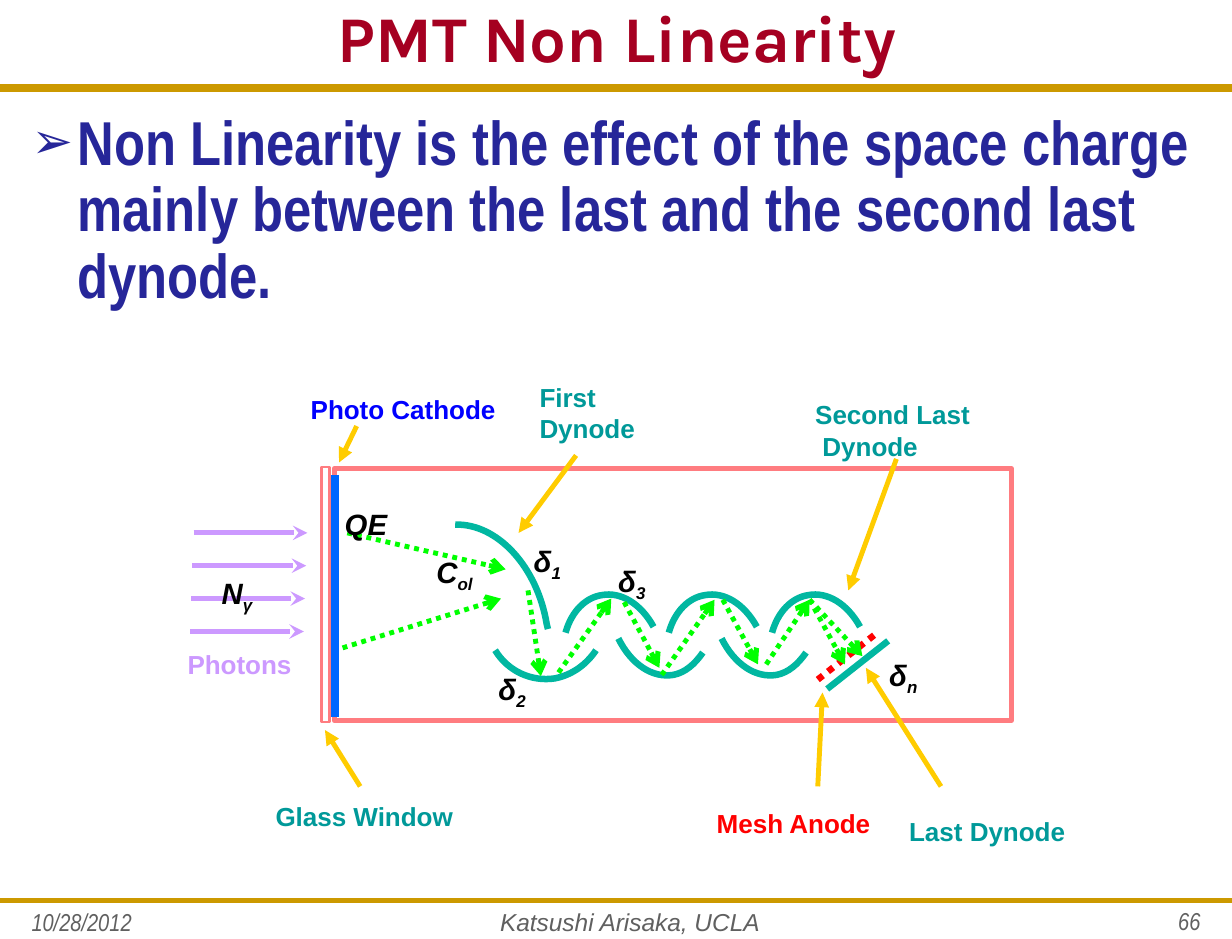
from dataclasses import dataclass

from lxml import etree
from pptx import Presentation
from pptx.dml.color import RGBColor
from pptx.enum.dml import MSO_LINE
from pptx.enum.shapes import MSO_CONNECTOR, MSO_SHAPE
from pptx.enum.text import MSO_ANCHOR, MSO_AUTO_SIZE, PP_ALIGN
from pptx.oxml.ns import qn
from pptx.util import Inches, Pt

STRAIGHT = MSO_CONNECTOR.STRAIGHT
RECTANGLE = MSO_SHAPE.RECTANGLE
DOTTED = MSO_LINE.ROUND_DOT
MIDDLE = MSO_ANCHOR.MIDDLE
FIXED, GROW = MSO_AUTO_SIZE.NONE, MSO_AUTO_SIZE.SHAPE_TO_FIT_TEXT
LEFT, CENTER, RIGHT = PP_ALIGN.LEFT, PP_ALIGN.CENTER, PP_ALIGN.RIGHT


@dataclass(frozen=True)
class Theme:
    title: str = "A50021"
    body: str = "262699"
    rule: str = "CC9900"
    footer: str = "606060"
    teal: str = "009999"
    dynode: str = "01B7A1"
    anode: str = "FF0000"
    cathode: str = "0066FF"
    cathode_text: str = "0000FF"
    tube: str = "FF7C80"
    pointer: str = "FFCC00"
    electron: str = "00FF00"
    photon: str = "CC99FF"
    symbol: str = "000000"
    white: str = "FFFFFF"
    sans: str = "Arial"
    narrow: str = "Arial Narrow"
    display: str = "Karla"
    title_size: int = 40
    body_size: int = 38
    symbol_size: int = 18
    label_size: int = 16
    footer_size: int = 15


class SlideBuilder:
    def __init__(self, page, theme):
        self.page, self.theme = page, theme

    def style(self, para, name, size, color, bold=False, italic=False):
        font = para.font
        font.name, font.size = name, Pt(size)
        font.bold, font.italic = bold, italic
        font.color.rgb = RGBColor.from_string(color)

    def place(self, shape, left, top, width, height):
        shape.left, shape.top = Inches(left), Inches(top)
        shape.width, shape.height = Inches(width), Inches(height)

    def title(self, text, *area):
        box = self.page.shapes.title
        self.place(box, *area)
        frame = box.text_frame
        frame.text, frame.auto_size, frame.vertical_anchor = text, FIXED, MIDDLE
        para = frame.paragraphs[0]
        para.alignment, para.line_spacing = CENTER, 0.8
        self.style(para, self.theme.display, self.theme.title_size, self.theme.title, bold=True)

    def bullet(self, text, *area):
        box = self.page.placeholders[1]
        self.place(box, *area)
        frame = box.text_frame
        frame.text, frame.auto_size = text, FIXED
        para = frame.paragraphs[0]
        para.line_spacing, para.space_before = 0.9, Pt(0)
        props = para._p.get_or_add_pPr()
        props.set("marL", str(Inches(0.39)))
        props.set("indent", str(-Inches(0.39)))
        etree.SubElement(props, qn("a:buSzPct")).set("val", "80000")
        etree.SubElement(props, qn("a:buChar")).set("char", "➢")
        self.style(para, self.theme.narrow, self.theme.body_size, self.theme.body, bold=True)

    def text_box(self, left, top, width, height, wrap, fit):
        box = self.page.shapes.add_textbox(Inches(left), Inches(top), Inches(width), Inches(height))
        box.text_frame.word_wrap, box.text_frame.auto_size = wrap, fit
        return box.text_frame

    def footer(self, text, area, align, name):
        frame = self.text_box(*area, True, FIXED)
        frame.text = text
        para = frame.paragraphs[0]
        para.alignment = align
        self.style(para, name, self.theme.footer_size, self.theme.footer, italic=True)

    def label(self, text, area, color, wrap=False):
        frame = self.text_box(*area, wrap, GROW)
        frame.text = text
        for para in frame.paragraphs:
            self.style(para, self.theme.sans, self.theme.label_size, color, bold=True)

    def symbol(self, base, subscript, left, top, width):
        para = self.text_box(left, top, width, 0.4, False, GROW).paragraphs[0]
        self.style(para, self.theme.sans, self.theme.symbol_size, self.theme.symbol, bold=True, italic=True)
        para.add_run().text = base
        if subscript:
            span = para.add_run()
            span.text = subscript
            span.font._element.set("baseline", "-25000")

    def line(self, start, end, color, width, dash=None, head=None):
        x1, y1, x2, y2 = (Inches(value) for value in (*start, *end))
        connector = self.page.shapes.add_connector(STRAIGHT, x1, y1, x2, y2)
        self.stroke(connector, color, width)
        if dash is not None:
            connector.line.dash_style = dash
        props = connector._element.spPr
        if head:
            etree.SubElement(props.find(qn("a:ln")), qn("a:tailEnd")).set("type", head)
        etree.SubElement(props, qn("a:effectLst"))

    def stroke(self, shape, color, width):
        shape.line.color.rgb = RGBColor.from_string(color)
        shape.line.width = Pt(width)

    def rectangle(self, area, color, width, fill=None):
        box = self.page.shapes.add_shape(RECTANGLE, *(Inches(value) for value in area))
        box.shadow.inherit = False
        self.stroke(box, color, width)
        if fill:
            box.fill.solid()
            box.fill.fore_color.rgb = RGBColor.from_string(fill)
        else:
            box.fill.background()

    def curve(self, points, shift=0):
        """Draw Bezier arcs: a start point, then three points for each arc."""
        start, *rest = [(Inches(x + shift), Inches(y)) for x, y in points]
        builder = self.page.shapes.build_freeform(*start)
        builder.add_line_segments(rest, close=False)
        shape = builder.convert_to_shape()
        segments = list(shape._element.iter(qn("a:lnTo")))
        for first in range(0, len(segments), 3):
            outline = segments[first].getparent()
            bezier = etree.SubElement(outline, qn("a:cubicBezTo"))
            for segment in segments[first:first + 3]:
                bezier.append(segment[0])
                outline.remove(segment)
        shape.shadow.inherit = False
        shape.fill.background()
        self.stroke(shape, self.theme.dynode, 4)


def main():
    deck = Presentation()
    deck.slide_width, deck.slide_height = Inches(10.5), Inches(8)
    theme = Theme()
    slide = SlideBuilder(deck.slides.add_slide(deck.slide_layouts[1]), theme)

    # Rules, footer, title and statement
    for y, width in ((0.75, 4.5), (7.67, 3)):
        slide.line((0, y), (10.5, y), theme.rule, width)
    slide.footer("10/28/2012", (0.17, 7.68, 2.08, 0.32), LEFT, theme.narrow)
    slide.footer("Katsushi Arisaka, UCLA", (2.33, 7.68, 6.08, 0.32), CENTER, theme.sans)
    slide.footer("66", (8.5, 7.67, 1.83, 0.33), RIGHT, theme.narrow)
    slide.title("PMT Non Linearity", 0.17, 0, 10.17, 0.75)
    slide.bullet("Non Linearity is the effect of the space charge mainly between "
                 "the last and the second last dynode.", 0.17, 0.9, 10.22, 6.67)

    # Tube, photo cathode and glass window
    slide.rectangle((2.85, 3.99, 5.77, 2.15), theme.tube, 3)
    slide.line((2.85, 6.11), (2.85, 4.05), theme.cathode, 6)
    slide.rectangle((2.74, 3.98, 0.07, 2.17), theme.tube, 1.5, theme.white)

    # Dynodes: the first two, then upper and lower rows at an equal pitch
    pitch = 0.88
    slide.curve([(4.67, 5.36), (4.67, 5.35), (4.66, 5.33), (4.66, 5.32),
                 (4.58, 4.83), (4.24, 4.46), (3.88, 4.47)])
    slide.curve([(4.22, 5.54), (4.33, 5.72), (4.53, 5.81), (4.73, 5.78),
                 (4.88, 5.75), (5, 5.66), (5.08, 5.54)])
    upper = [(5.57, 5.34), (5.46, 5.14), (5.29, 5.04), (5.13, 5.07),
             (4.99, 5.09), (4.87, 5.21), (4.82, 5.39)]
    lower = [(5.27, 5.44), (5.38, 5.66), (5.56, 5.78), (5.74, 5.75),
             (5.84, 5.73), (5.92, 5.66), (5.99, 5.56)]
    for row, count in ((upper, 3), (lower, 2)):
        for index in range(count):
            slide.curve(row, index * pitch)

    # Last dynode and mesh anode
    slide.line((7.05, 5.87), (7.57, 5.46), theme.dynode, 4)
    slide.line((6.97, 5.79), (7.49, 5.38), theme.anode, 4, DOTTED)

    # Electron paths
    for start, end in (
        ((2.96, 4.54), (4.31, 4.85)), ((2.92, 5.52), (4.27, 5.1)),
        ((4.5, 5.03), (4.61, 5.76)), ((4.76, 5.73), (5.21, 5.1)),
        ((5.32, 5.13), (5.62, 5.69)), ((5.64, 5.75), (6.09, 5.11)),
        ((6.16, 5.11), (6.46, 5.66)), ((6.53, 5.66), (6.9, 5.11)),
        ((6.9, 5.11), (7.2, 5.66)), ((6.9, 5.11), (7.35, 5.59)),
    ):
        slide.line(start, end, theme.electron, 3, DOTTED, "arrow")

    # Incoming photons
    for index in range(4):
        x, y = 1.65 - 0.01 * index, 4.54 + 0.28 * index
        slide.line((x, y), (x + 0.97, y), theme.photon, 3, head="stealth")

    # Part names and their pointers
    slide.label("Photo Cathode", (2.55, 3.3, 1.8, 0.37), theme.cathode_text)
    slide.label("First Dynode", (4.5, 3.2, 1.5, 0.64), theme.teal, wrap=True)
    slide.label("Second Last\n Dynode", (6.85, 3.35, 1.54, 0.64), theme.teal)
    slide.label("Glass Window", (2.25, 6.77, 2.13, 0.37), theme.teal, wrap=True)
    slide.label("Mesh Anode", (6.01, 6.83, 1.52, 0.37), theme.anode)
    slide.label("Last Dynode", (7.65, 6.9, 1.55, 0.37), theme.teal)
    slide.label("Photons", (1.5, 5.48, 1.24, 0.37), theme.photon, wrap=True)
    for start, end in (
        ((3.04, 3.63), (2.89, 3.94)), ((4.91, 3.88), (4.42, 4.54)),
        ((7.64, 3.91), (7.23, 5.03)), ((3.07, 6.7), (2.77, 6.22)),
        ((6.97, 6.7), (7.01, 5.9)), ((8.02, 6.7), (7.38, 5.69)),
    ):
        slide.line(start, end, theme.pointer, 3, head="triangle")

    # Symbols
    for base, subscript, left, top, width in (
        ("QE", "", 2.84, 4.26, 0.63), ("C", "ol", 3.62, 4.67, 0.58),
        ("δ", "1", 4.45, 4.58, 0.48), ("δ", "2", 4.15, 5.67, 0.48),
        ("δ", "3", 5.17, 4.75, 0.48), ("δ", "n", 7.48, 5.55, 0.49),
        ("N", "γ", 1.79, 4.85, 0.51),
    ):
        slide.symbol(base, subscript, left, top, width)

    deck.save("out.pptx")


if __name__ == "__main__":
    main()
